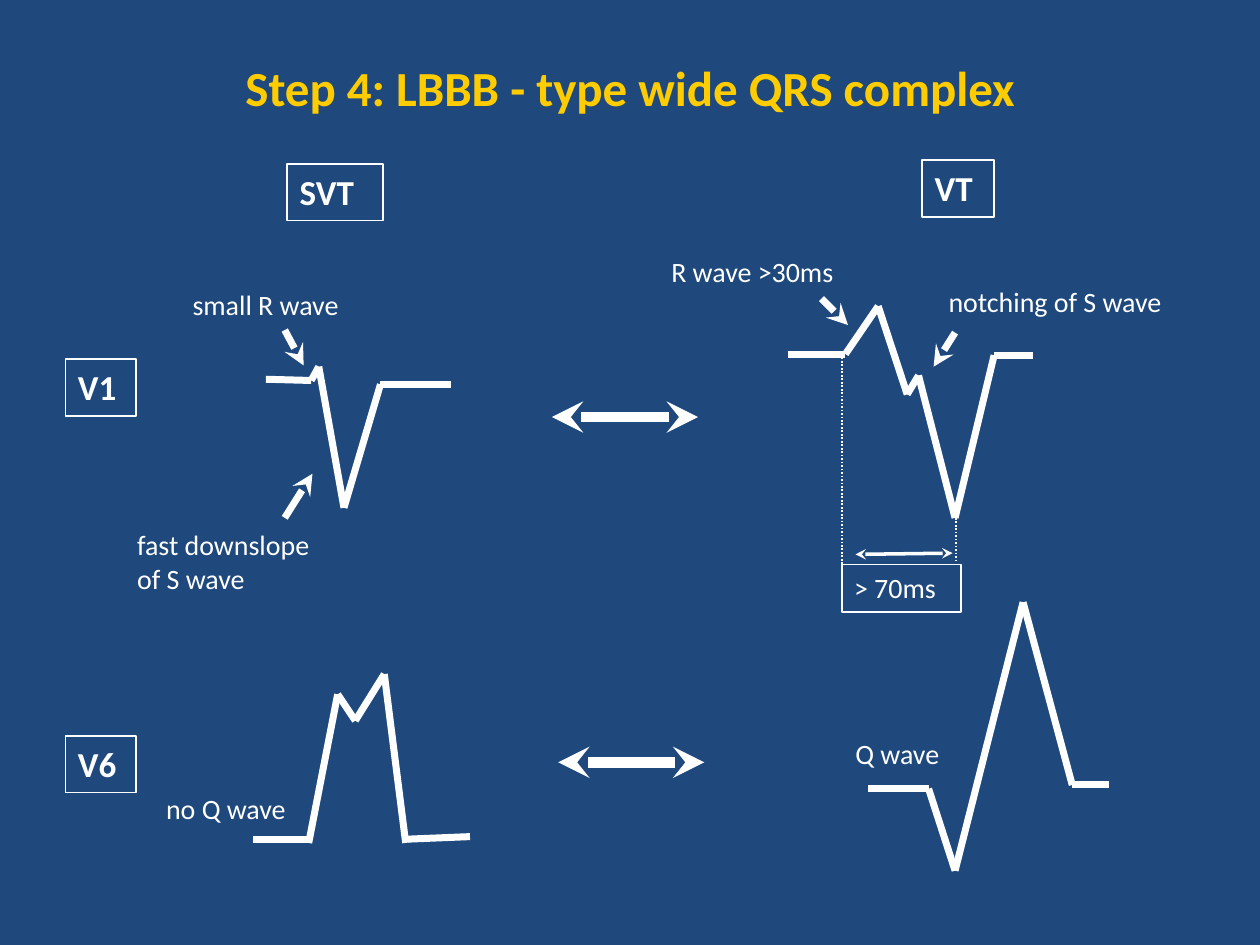
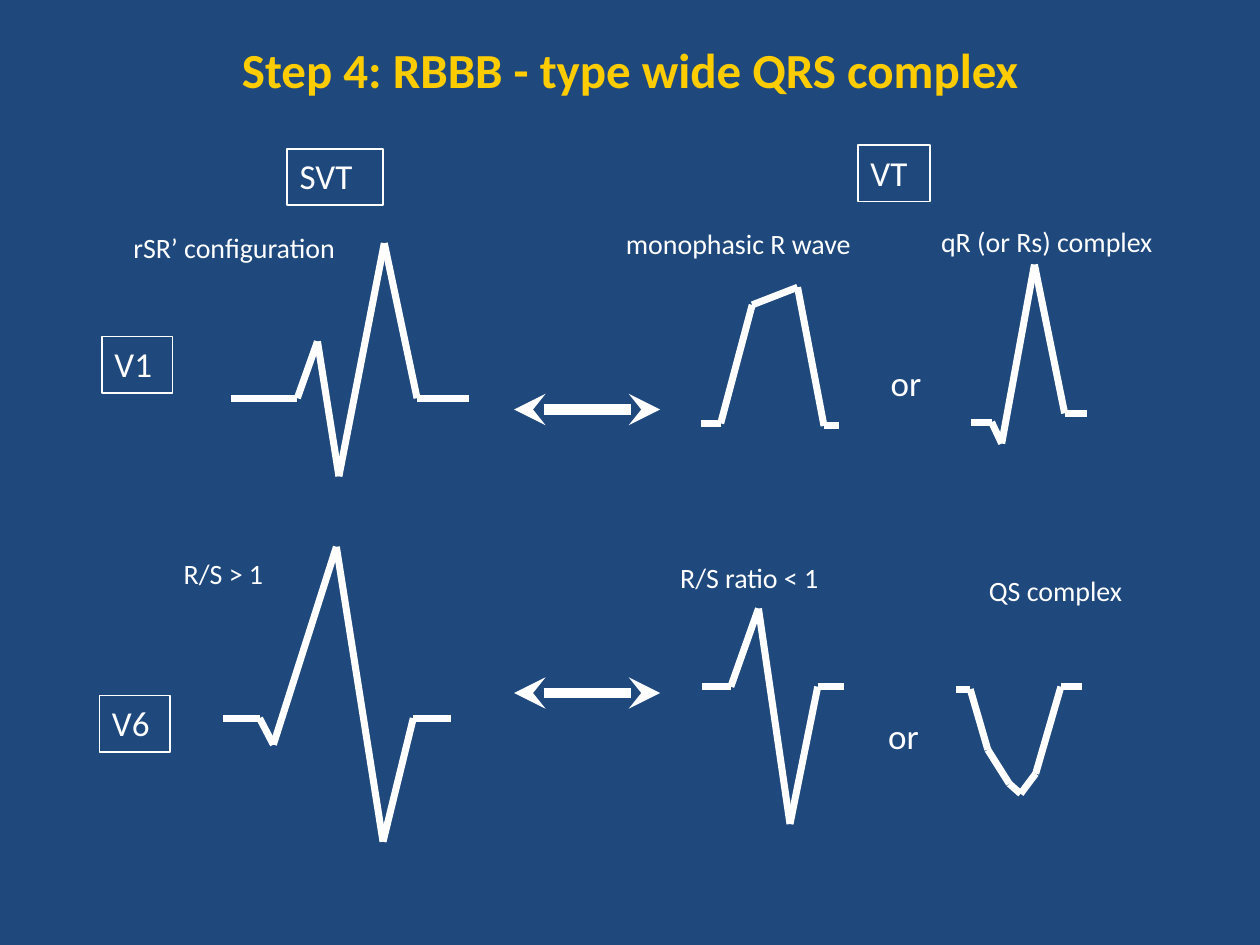
import itertools

import pptx
import pptx.dml.color
import pptx.enum.dml
import pptx.enum.shapes
import pptx.enum.text
import pptx.oxml
import pptx.util
from pptx.oxml.ns import qn
from pptx.util import Inches

NAVY, GOLD, WHITE = "1F497D", "FFCC00", "FFFFFF"
FONT = "Calibri"
DOTTED = pptx.enum.dml.MSO_LINE.ROUND_DOT


def rgb(hex_code):
    return pptx.dml.color.RGBColor.from_string(hex_code)


class EcgDeck:
    def __init__(self):
        self.deck = pptx.Presentation()
        self.deck.slide_width, self.deck.slide_height = Inches(10), Inches(7.5)
        fill = self.deck.slide_master.background.fill
        fill.solid()
        fill.fore_color.rgb = rgb(NAVY)
        self.page = None

    def format_text(self, frame, size, color=WHITE, bold=False):
        for para in frame.paragraphs:
            for span in para.runs:
                span.font.name = FONT
                span.font.size = pptx.util.Pt(size)
                span.font.bold = bold
                span.font.color.rgb = rgb(color)

    def add_page(self, title, top, bottom_inset=0.05):
        self.page = self.deck.slides.add_slide(self.deck.slide_layouts[5])
        box = self.page.shapes.title
        box.left, box.top = Inches(0.5), Inches(top)
        box.width, box.height = Inches(9), Inches(1.25)
        frame = box.text_frame
        frame.text = title
        frame.auto_size = pptx.enum.text.MSO_AUTO_SIZE.NONE
        frame.vertical_anchor = pptx.enum.text.MSO_ANCHOR.MIDDLE
        frame.margin_bottom = Inches(bottom_inset)
        frame.paragraphs[0].alignment = pptx.enum.text.PP_ALIGN.CENTER
        self.format_text(frame, 28, GOLD, bold=True)

    def label(self, text, left, top, width, height=0.37, size=16, bold=False):
        box = self.page.shapes.add_textbox(
            Inches(left), Inches(top), Inches(width), Inches(height))
        frame = box.text_frame
        frame.text = text
        frame.word_wrap = False
        frame.auto_size = pptx.enum.text.MSO_AUTO_SIZE.SHAPE_TO_FIT_TEXT
        self.format_text(frame, size, bold=bold)
        return box

    def framed_label(self, *args, **style):
        box = self.label(*args, **style)
        box.line.color.rgb = rgb(WHITE)
        box.line.width = pptx.util.Pt(1)

    def heading(self, text, left, top, width, bold):
        self.framed_label(text, left, top, width, 0.45, size=20, bold=bold)

    def line(self, start, end, width=4, dash=None, arrows=()):
        """Draw a straight line; arrows may name "headEnd" (start) and "tailEnd" (end)."""
        points = [Inches(value) for value in (*start, *end)]
        link = self.page.shapes.add_connector(
            pptx.enum.shapes.MSO_CONNECTOR.STRAIGHT, *points)
        link.line.color.rgb = rgb(WHITE)
        link.line.width = pptx.util.Pt(width)
        if dash:
            link.line.dash_style = dash
        outline = link.line._get_or_add_ln()
        for end_name in arrows:
            pptx.oxml.xmlchemy.OxmlElement  # noqa
            tip = pptx.oxml.xmlchemy.OxmlElement("a:" + end_name)
            tip.set("type", "stealth")
            outline.append(tip)
        properties = link._element.find(qn("p:spPr"))
        properties.append(pptx.oxml.xmlchemy.OxmlElement("a:effectLst"))

    def wave(self, *points):
        for start, end in itertools.pairwise(points):
            self.line(start, end)

    def pointer(self, start, tip):
        self.line(start, tip, arrows=["tailEnd"])

    def double_arrow(self, start, end, width=6):
        self.line(start, end, width, arrows=["headEnd", "tailEnd"])

    def comparison(self, left, middle):
        self.double_arrow((left, middle), (left + 1.16, middle))


def lbbb_page(ecg):
    ecg.add_page("Step 4: LBBB - type wide QRS complex", 0.3, bottom_inset=0.52)

    for text, left, top, width in [("SVT", 2.28, 1.3, 0.76), ("VT", 7.32, 1.27, 0.57),
                                   ("V1", 0.52, 2.85, 0.56), ("V6", 0.52, 5.84, 0.56)]:
        ecg.heading(text, left, top, width, bold=True)

    # SVT: V1 above V6
    ecg.wave((2.11, 3.01), (2.47, 3.02), (2.53, 2.91), (2.73, 4.03), (3.02, 3.05), (3.58, 3.05))
    ecg.wave((2.01, 6.66), (2.45, 6.66))
    ecg.wave((2.45, 6.69), (2.68, 5.51), (2.82, 5.72), (3.05, 5.35), (3.22, 6.69))
    ecg.wave((3.24, 6.66), (3.73, 6.64))
    # VT: V1 above V6
    ecg.wave((6.25, 2.81), (6.71, 2.81), (6.97, 2.43), (7.2, 3.13), (7.29, 2.98),
             (7.58, 4.11), (7.89, 2.82), (8.2, 2.82))
    ecg.wave((6.89, 6.26), (7.37, 6.26), (7.58, 6.91), (8.12, 4.78), (8.51, 6.23), (8.8, 6.23))

    ecg.comparison(4.38, 3.31)
    ecg.comparison(4.43, 6.05)

    for text, left, top, width in [("small R wave", 1.43, 2.23, 1.52),
                                   ("notching of S wave", 7.43, 2.21, 2.08),
                                   ("R wave >30ms", 5.23, 1.97, 1.5),
                                   ("no Q wave", 1.22, 6.23, 1.26),
                                   ("Q wave", 6.69, 5.8, 0.95)]:
        ecg.label(text, left, top, width)
    ecg.label("fast downslope\nof S wave", 0.99, 4.14, 1.68, 0.64)

    for start, tip in [((2.26, 4.11), (2.48, 3.76)), ((2.26, 2.62), (2.41, 2.9)),
                       ((6.52, 2.37), (6.73, 2.58)), ((7.58, 2.64), (7.41, 2.91))]:
        ecg.pointer(start, tip)

    # Onset of R to nadir of S
    ecg.line((6.68, 2.81), (6.68, 4.52), 1, DOTTED)
    ecg.line((7.59, 4.11), (7.59, 4.46), 1, DOTTED)
    ecg.double_arrow((6.79, 4.4), (7.56, 4.39), 2)
    ecg.framed_label("> 70ms", 6.68, 4.48, 0.95, 0.38)


def rbbb_page(ecg):
    ecg.add_page("Step 4: RBBB - type wide QRS complex", -0.08)

    for text, left, top, width in [("SVT", 2.28, 1.18, 0.76), ("VT", 6.81, 1.15, 0.57),
                                   ("V1", 0.81, 2.67, 0.56), ("V6", 0.79, 5.52, 0.56)]:
        ecg.heading(text, left, top, width, bold=False)

    # V1: SVT, monophasic R, qR
    ecg.wave((1.83, 3.16), (2.36, 3.16), (2.52, 2.71), (2.69, 3.78), (3.05, 1.93),
             (3.31, 3.16), (3.72, 3.16))
    ecg.wave((5.56, 3.36), (5.72, 3.36), (5.97, 2.42), (6.33, 2.28), (6.54, 3.38), (6.66, 3.38))
    ecg.wave((7.71, 3.35), (7.87, 3.35), (7.95, 3.52), (8.21, 2.1), (8.45, 3.28), (8.63, 3.28))
    # V6: SVT, low R/S ratio, QS
    ecg.wave((1.77, 5.7), (2.06, 5.7), (2.17, 5.91), (2.67, 4.34), (3.04, 6.68),
             (3.28, 5.7), (3.58, 5.7))
    ecg.wave((5.57, 5.45), (5.8, 5.45), (6.02, 4.83), (6.27, 6.54), (6.49, 5.45), (6.7, 5.45))
    ecg.wave((7.59, 5.47), (7.7, 5.47), (7.84, 5.95), (8.01, 6.22), (8.1, 6.3),
             (8.22, 6.14), (8.42, 5.45), (8.59, 5.45))

    for middle in (3.25, 5.5):
        ecg.comparison(4.08, middle)

    for left, top in [(6.97, 2.82), (6.95, 5.62)]:
        ecg.label("or", left, top, 0.45, 0.43, size=20)
    for text, left, top, width in [("rSR’ configuration", 0.96, 1.78, 1.97),
                                   ("monophasic R wave", 4.87, 1.75, 2.2),
                                   ("qR (or Rs) complex", 7.37, 1.73, 2.12),
                                   ("R/S > 1", 1.36, 4.37, 0.95),
                                   ("R/S ratio < 1", 5.3, 4.4, 1.44),
                                   ("QS complex", 7.75, 4.5, 1.41)]:
        ecg.label(text, left, top, width)


def main():
    ecg = EcgDeck()
    lbbb_page(ecg)
    rbbb_page(ecg)
    ecg.deck.save("out.pptx")


if __name__ == "__main__":
    main()
